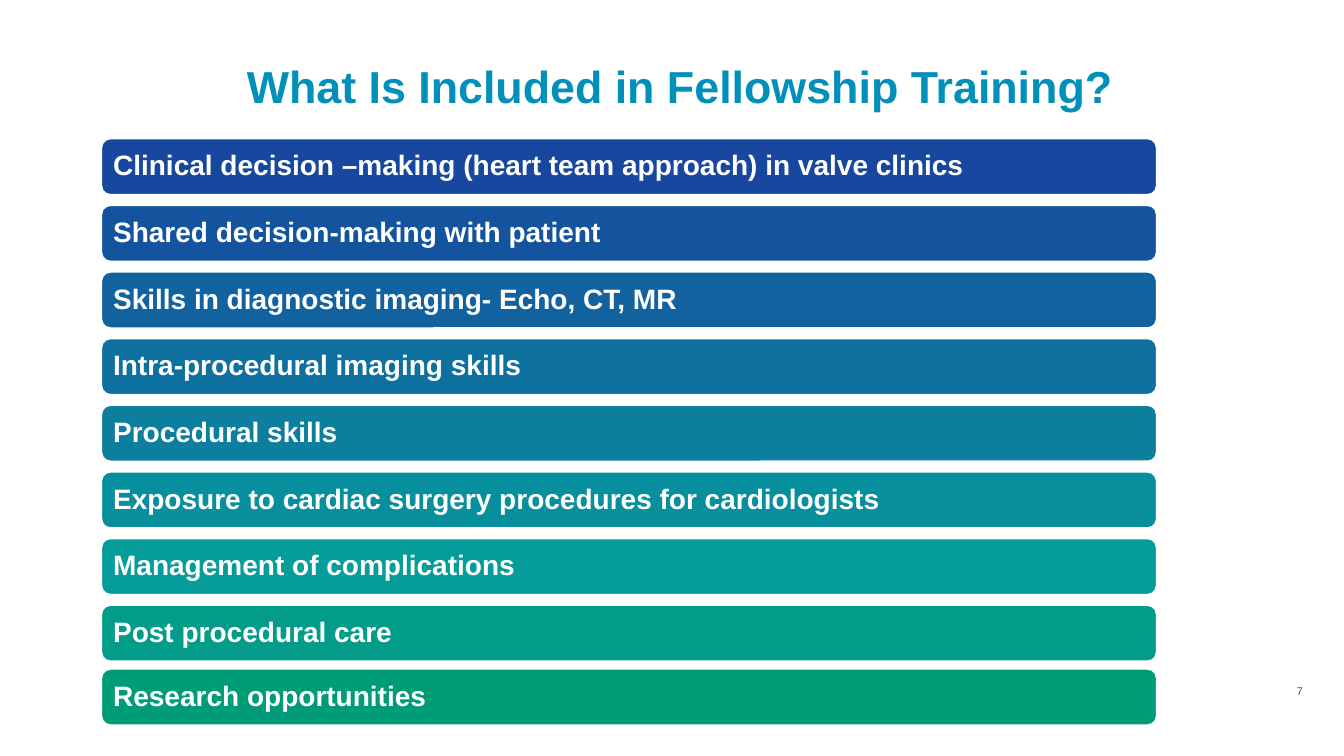
from pptx import Presentation
from pptx.dml.color import RGBColor
from pptx.enum import shapes, text
from pptx.util import Pt

COLOURS = {"title": "0090BA", "white": "FFFFFF", "number": "555555"}
FONT = "Arial"
TOPICS = [
    ("Clinical decision –making (heart team approach) in valve clinics", "17479E"),
    ("Shared decision-making with patient", "14549E"),
    ("Skills in diagnostic imaging- Echo, CT, MR", "11629E"),
    ("Intra-procedural imaging skills", "0E709E"),
    ("Procedural skills", "0B7F9D"),
    ("Exposure to cardiac surgery procedures for cardiologists", "088F9D"),
    ("Management of complications", "059C9A"),
    ("Post procedural care", "039C89"),
    ("Research opportunities", "009B77"),
]


def write(shape, words, size, colour, align, bold=False, inset=0.0):
    """Put one line of text, vertically centred, into a shape."""
    frame = shape.text_frame
    frame.word_wrap = True
    frame.vertical_anchor = text.MSO_ANCHOR.MIDDLE
    frame.margin_left = frame.margin_right = Pt(inset)
    frame.margin_top = frame.margin_bottom = Pt(0)
    para = frame.paragraphs[0]
    para.alignment = align
    span = para.add_run()
    span.text = words
    span.font.name = FONT
    span.font.size = Pt(size)
    span.font.bold = bold
    span.font.color.rgb = RGBColor.from_string(colour)
    return para


def add_title(page, left, top, width, height):
    box = page.shapes.add_textbox(Pt(left), Pt(top), Pt(width), Pt(height))
    write(box, "What Is Included in Fellowship Training?", 32,
          COLOURS["title"], text.PP_ALIGN.CENTER, bold=True, inset=7.2)


def add_bar(page, left, top, width, height, words, fill):
    bar = page.shapes.add_shape(shapes.MSO_SHAPE.ROUNDED_RECTANGLE,
                                Pt(left), Pt(top), Pt(width), Pt(height))
    bar.shadow.inherit = False
    bar.fill.solid()
    bar.fill.fore_color.rgb = RGBColor.from_string(fill)
    bar.line.color.rgb = RGBColor.from_string(COLOURS["white"])
    bar.line.width = Pt(2)
    para = write(bar, words, 20, COLOURS["white"], text.PP_ALIGN.LEFT,
                 bold=True, inset=6.8)
    para.line_spacing = 0.9


def add_topics(page, left, top, width, height):
    """Stack the topic bars at an even pitch, the last one ending at the bottom."""
    bar_height, pitch = 41, 47.6
    for row, (words, fill) in enumerate(TOPICS):
        offset = min(row * pitch, height - bar_height)
        add_bar(page, left, top + offset, width, bar_height, words, fill)


def add_page_number(page, left, top, width, height):
    box = page.shapes.add_textbox(Pt(left), Pt(top), Pt(width), Pt(height))
    write(box, "7", 8, COLOURS["number"], text.PP_ALIGN.CENTER)


def main():
    deck = Presentation()
    deck.slide_width, deck.slide_height = Pt(960), Pt(540)
    page = deck.slides.add_slide(deck.slide_layouts[6])
    add_topics(page, 72, 98.6, 754.6, 419.8)
    add_title(page, 72, 37.4, 828, 48.2)
    add_page_number(page, 918.7, 488.9, 19.4, 9.4)
    deck.save("out.pptx")


if __name__ == "__main__":
    main()
